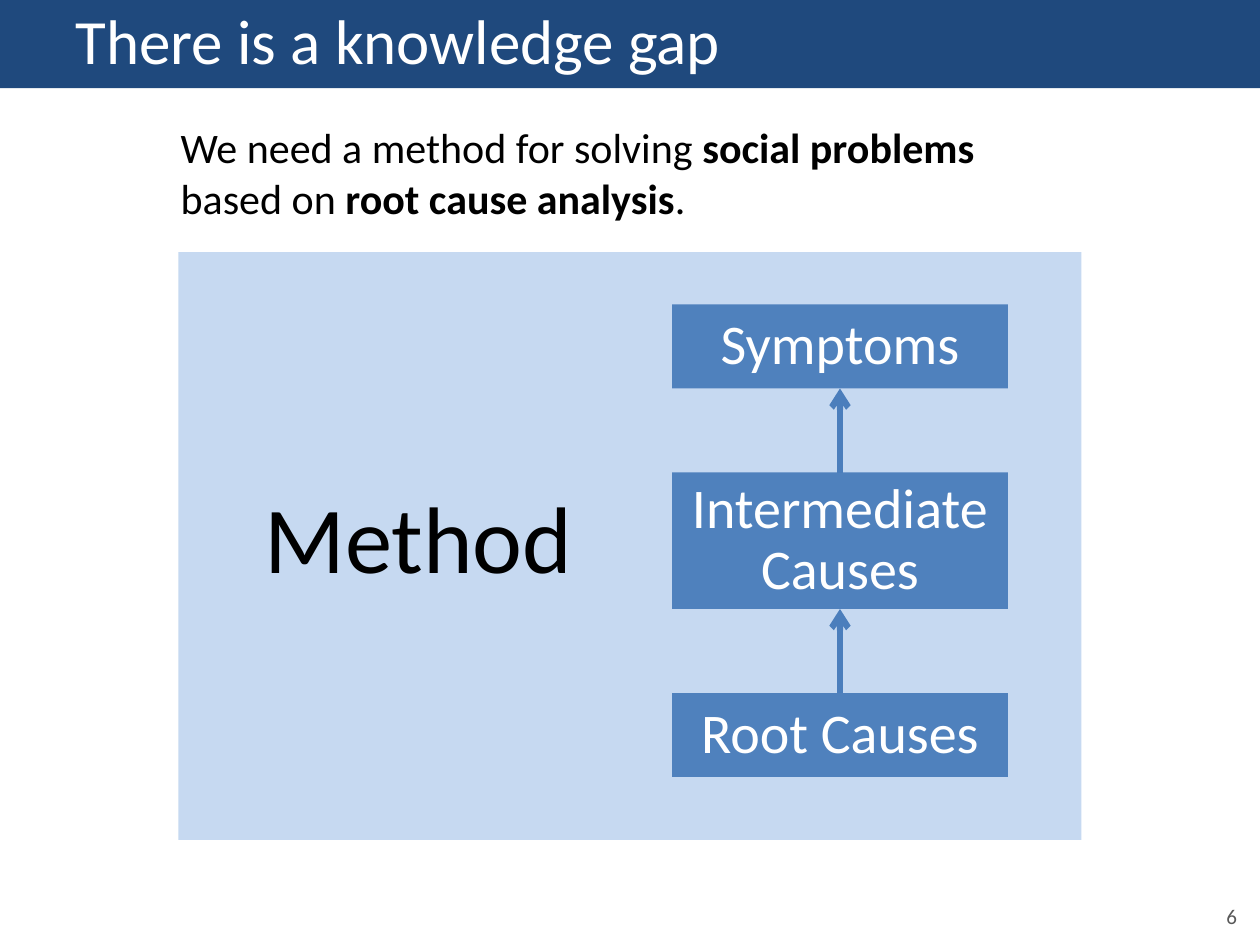
from pptx import Presentation
from pptx import util as u
from pptx.dml.color import RGBColor
from pptx.enum import shapes, text
from pptx.oxml.ns import qn
from lxml import etree

COLORS = {
    "band": "1F497D", "panel": "C6D9F1", "cause": "4F81BD", "arrow": "4B7EBC",
    "white": "FFFFFF", "black": "000000", "number": "595959",
}
COLUMNS, ROWS = 120, 90

deck = Presentation()
deck.slide_width, deck.slide_height = u.Inches(10), u.Inches(7.5)
column, row = deck.slide_width / COLUMNS, deck.slide_height / ROWS
slide = deck.slides.add_slide(deck.slide_layouts[0])


def place(item, left, top, width, height, fill=None):
    item.left, item.top = round(left * column), round(top * row)
    item.width, item.height = round(width * column), round(height * row)
    if fill:
        item.fill.solid()
        item.fill.fore_color.rgb = RGBColor.from_string(COLORS[fill])
    return item


def write(paragraph, words, size, color, bold=False):
    run = paragraph.add_run()
    run.text = words
    run.font.name, run.font.size, run.font.bold = "Calibri", u.Pt(size), bold
    run.font.color.rgb = RGBColor.from_string(COLORS[color])


heading = place(slide.shapes.title, 0, 0, COLUMNS, 8.4, "band")
heading.text_frame.auto_size = text.MSO_AUTO_SIZE.NONE
heading.text_frame.vertical_anchor = text.MSO_ANCHOR.MIDDLE
heading.text_frame.margin_top = heading.text_frame.margin_bottom = 0
heading_line = heading.text_frame.paragraphs[0]
heading_line.alignment = text.PP_ALIGN.LEFT
heading_line.line_spacing = 0.9
heading_line._p.get_or_add_pPr().set("marL", str(u.Inches(0.5)))
write(heading_line, "There is a knowledge gap", 36, "white")

need = place(slide.placeholders[1], 16, 11, 88, 11)
need.text_frame.auto_size = text.MSO_AUTO_SIZE.NONE
need_line = need.text_frame.paragraphs[0]
need_line.alignment = text.PP_ALIGN.LEFT
need_line.space_before = u.Pt(0)
write(need_line, "We need a method for solving ", 24, "black")
write(need_line, "social problems", 24, "black", True)
need_line.add_line_break()
write(need_line, "based on ", 24, "black")
write(need_line, "root cause analysis", 24, "black", True)
write(need_line, ".", 24, "black")

chain = [
    (None, 17, 24, 86, 56, "panel"),
    ("Symptoms", 64, 29, 32, 8, "cause"),
    ("Intermediate Causes", 64, 45, 32, 13, "cause"),
    ("Root Causes", 64, 66, 32, 8, "cause"),
]
levels = []
for words, left, top, width, height, fill in chain:
    block = slide.shapes.add_shape(shapes.MSO_SHAPE.RECTANGLE, 0, 0, 0, 0)
    place(block, left, top, width, height, fill)
    block.shadow.inherit = False
    block.line.fill.background()
    if words:
        block.text_frame.word_wrap = True
        block.text_frame.vertical_anchor = text.MSO_ANCHOR.MIDDLE
        label = block.text_frame.paragraphs[0]
        label.alignment = text.PP_ALIGN.CENTER
        label.line_spacing = 0.9
        write(label, words, 32, "white")
        levels.append(block)

for effect, cause in zip(levels, levels[1:]):
    arrow = slide.shapes.add_connector(shapes.MSO_CONNECTOR.STRAIGHT, 0, 0, 0, 0)
    arrow.begin_connect(cause, 0)
    arrow.end_connect(effect, 2)
    arrow.line.width = u.Pt(3.5)
    arrow.line.color.rgb = RGBColor.from_string(COLORS["arrow"])
    etree.SubElement(arrow.line._get_or_add_ln(), qn("a:tailEnd"), type="arrow")
    etree.SubElement(arrow._element.spPr, qn("a:effectLst"))

captions = [
    ("Method", 24, 45, 32, 12, 54, "black", text.PP_ALIGN.LEFT),
    ("6", 113, 85.5, 6, 4, 12, "number", text.PP_ALIGN.RIGHT),
]
for words, left, top, width, height, size, color, alignment in captions:
    caption = place(slide.shapes.add_textbox(0, 0, 0, 0), left, top, width, height)
    caption.text_frame.word_wrap = True
    caption.text_frame.paragraphs[0].alignment = alignment
    write(caption.text_frame.paragraphs[0], words, size, color)

deck.save("out.pptx")
